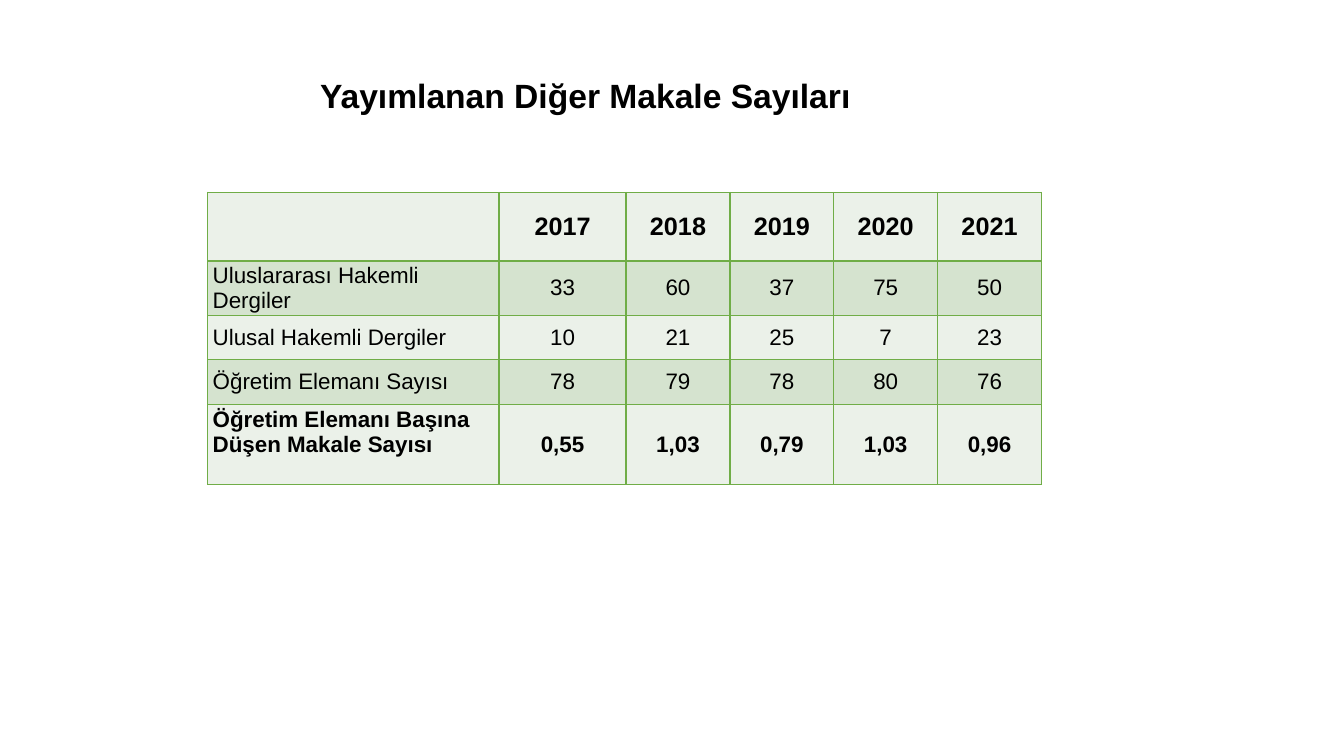
"""Build a slide with a table of published article counts by year."""
from dataclasses import dataclass

import lxml.etree
import pptx
import pptx.dml.color
import pptx.enum.text
import pptx.oxml.ns
import pptx.util

Inches = pptx.util.Inches
COLORS = {"text": "000000", "light": "EBF1E9", "band": "D5E3CF", "border": "70AD47"}
FONT = "Arial"
COLUMN_WIDTHS = [2.89, 1.26] + [1.03] * 4


@dataclass
class TableRow:
    label: str
    values: list[str]
    height: float
    fill: str
    size: int = 16
    bold: bool = False
    label_bottom: float = 0


ROWS = [
    TableRow("", ["2017", "2018", "2019", "2020", "2021"], 0.68, "light", size=18, bold=True),
    TableRow("Uluslararası Hakemli Dergiler", ["33", "60", "37", "75", "50"], 0.54, "band"),
    TableRow("Ulusal Hakemli Dergiler", ["10", "21", "25", "7", "23"], 0.44, "light"),
    TableRow("Öğretim Elemanı Sayısı", ["78", "79", "78", "80", "76"], 0.44, "band"),
    TableRow("Öğretim Elemanı Başına Düşen Makale Sayısı",
             ["0,55", "1,03", "0,79", "1,03", "0,96"], 0.8, "light",
             bold=True, label_bottom=0.25),
]


def write_text(text_frame, text: str, *, size: int, bold: bool = False,
               centered: bool = True) -> None:
    alignment = pptx.enum.text.PP_ALIGN
    paragraph = text_frame.paragraphs[0]
    paragraph.alignment = alignment.CENTER if centered else alignment.LEFT
    run = paragraph.add_run()
    run.text = text
    run.font.name = FONT
    run.font.size = pptx.util.Pt(size)
    run.font.bold = bold
    run.font.color.rgb = pptx.dml.color.RGBColor.from_string(COLORS["text"])


def add_borders(cell, color: str, width: float) -> None:
    qualified = pptx.oxml.ns.qn
    properties = cell._tc.get_or_add_tcPr()
    for side in ("lnL", "lnR", "lnT", "lnB"):
        line = lxml.etree.SubElement(properties, qualified(f"a:{side}"),
                                     w=str(pptx.util.Pt(width)))
        fill = lxml.etree.SubElement(line, qualified("a:solidFill"))
        lxml.etree.SubElement(fill, qualified("a:srgbClr"), val=color)


def format_cell(cell, fill: str, bottom: float = 0) -> None:
    add_borders(cell, COLORS["border"], 1)
    cell.fill.solid()
    cell.fill.fore_color.rgb = pptx.dml.color.RGBColor.from_string(COLORS[fill])
    cell.vertical_anchor = pptx.enum.text.MSO_ANCHOR.MIDDLE
    cell.margin_left = cell.margin_right = Inches(0.05)
    cell.margin_top = 0
    cell.margin_bottom = Inches(bottom)


def add_title(slide, text: str) -> None:
    title = slide.shapes.add_textbox(Inches(1.85), Inches(0.69), Inches(7.91), Inches(0.5))
    title.text_frame.word_wrap = True
    write_text(title.text_frame, text, size=24, bold=True)


def add_article_table(slide, rows: list[TableRow]) -> None:
    table = slide.shapes.add_table(
        len(rows), len(COLUMN_WIDTHS), Inches(2.06), Inches(1.91),
        Inches(sum(COLUMN_WIDTHS)), Inches(sum(row.height for row in rows))).table
    table.first_row = table.horz_banding = False
    for column, width in zip(table.columns, COLUMN_WIDTHS):
        column.width = Inches(width)
    for row_index, row in enumerate(rows):
        table.rows[row_index].height = Inches(row.height)
        for column_index, text in enumerate([row.label, *row.values]):
            cell = table.cell(row_index, column_index)
            is_label = column_index == 0
            format_cell(cell, row.fill, row.label_bottom if is_label else 0)
            if text:
                write_text(cell.text_frame, text, size=row.size, bold=row.bold,
                           centered=not is_label)


def main() -> None:
    presentation = pptx.Presentation()
    presentation.slide_width = Inches(13.33)
    presentation.slide_height = Inches(7.5)
    slide = presentation.slides.add_slide(presentation.slide_layouts[6])
    add_title(slide, "Yayımlanan Diğer Makale Sayıları")
    add_article_table(slide, ROWS)
    presentation.save("out.pptx")


if __name__ == "__main__":
    main()
